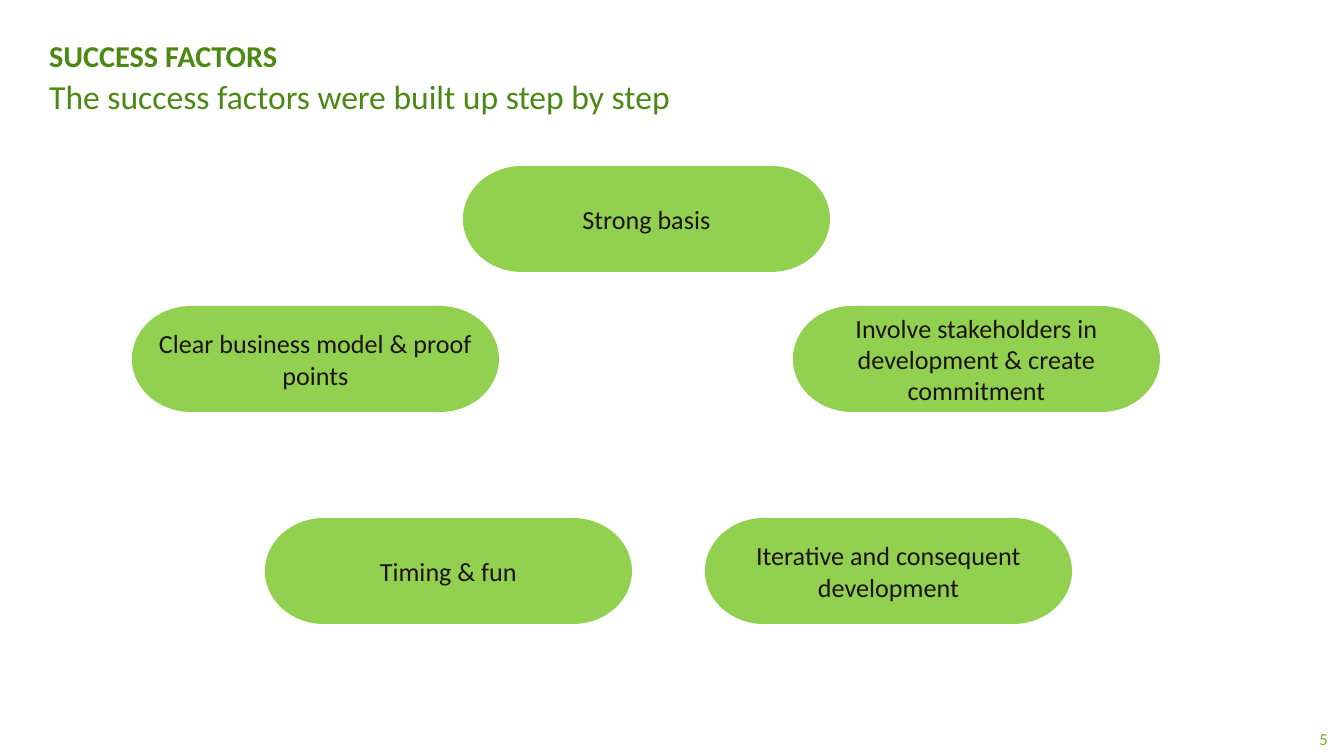
from pptx import Presentation
from pptx.dml.color import RGBColor
from pptx.enum.shapes import MSO_SHAPE
from pptx.enum.text import MSO_ANCHOR, PP_ALIGN
from pptx.util import Emu, Pt

EMU_PER_PX = 914400 / 134.4
FONT = "Calibri"
COLORS = {
    "title": "4C8814",
    "subtitle": "4C8914",
    "page_number": "65B61B",
    "factor": "92D050",
    "factor_text": "1D120F",
}
FACTOR_WIDTH, FACTOR_HEIGHT = 367, 106
FACTORS = [
    ("Clear business model & proof points", 132, 306),
    ("Involve stakeholders in development & create commitment", 793, 306),
    ("Iterative and consequent development", 705, 518),
    ("Timing & fun", 265, 518),
    ("Strong basis", 463, 166),
]


def px(length):
    return Emu(round(length * EMU_PER_PX))


def color(name):
    return RGBColor.from_string(COLORS[name])


def write_text(shape, text, size, color_name, align, anchor, bold=False):
    frame = shape.text_frame
    frame.word_wrap = True
    frame.vertical_anchor = anchor
    paragraph = frame.paragraphs[0]
    paragraph.text = text
    paragraph.alignment = align
    paragraph.font.name = FONT
    paragraph.font.size = Pt(size)
    paragraph.font.bold = bold
    paragraph.font.color.rgb = color(color_name)


def add_text(slide, box, text, size, color_name, align=PP_ALIGN.LEFT,
             anchor=MSO_ANCHOR.MIDDLE, bold=False):
    shape = slide.shapes.add_textbox(*map(px, box))
    write_text(shape, text, size, color_name, align, anchor, bold)


def add_factor(slide, text, left, top):
    shape = slide.shapes.add_shape(
        MSO_SHAPE.FLOWCHART_TERMINATOR,
        px(left), px(top), px(FACTOR_WIDTH), px(FACTOR_HEIGHT))
    shape.shadow.inherit = False
    shape.fill.solid()
    shape.fill.fore_color.rgb = color("factor")
    shape.line.fill.background()
    frame = shape.text_frame
    frame.margin_left = frame.margin_right = px(9)
    frame.margin_top = frame.margin_bottom = px(5)
    write_text(shape, text, 14, "factor_text", PP_ALIGN.CENTER, MSO_ANCHOR.MIDDLE)


def main():
    presentation = Presentation()
    presentation.slide_width = px(1344)
    presentation.slide_height = px(756)
    slide = presentation.slides.add_slide(presentation.slide_layouts[6])

    add_text(slide, (1028, 719, 313, 40), "5", 9, "page_number", PP_ALIGN.RIGHT)
    add_text(slide, (36, 31, 1240, 48), "SUCCESS FACTORS", 16.2, "title", bold=True)
    add_text(slide, (36, 69, 1240, 48), "The success factors were built up step by step",
             18, "subtitle", anchor=MSO_ANCHOR.TOP)
    for text, left, top in FACTORS:
        add_factor(slide, text, left, top)

    presentation.save("out.pptx")


if __name__ == "__main__":
    main()
